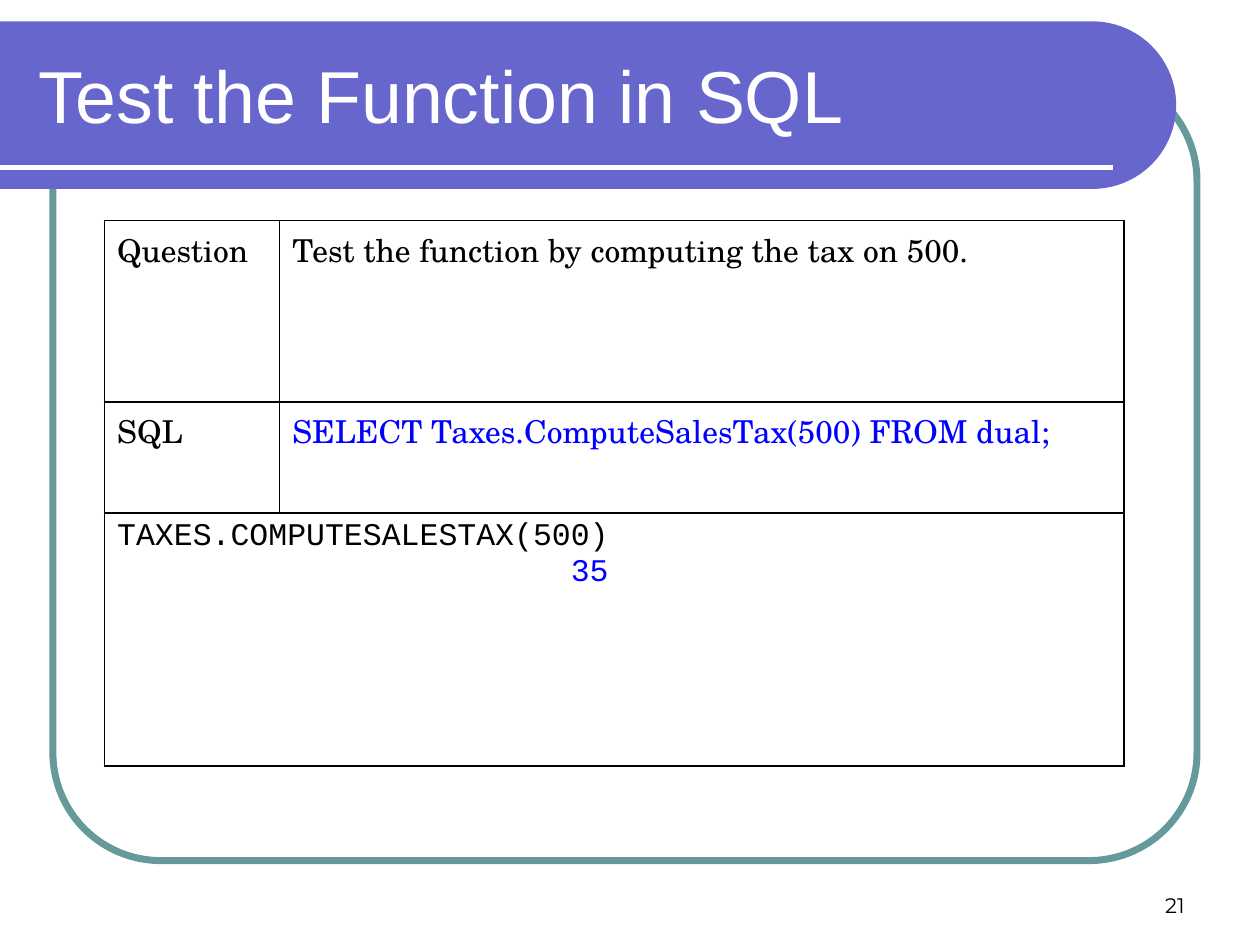
from math import cos, sin, pi
from lxml.etree import SubElement
from pptx import Presentation
from pptx.dml.color import RGBColor as RGB
from pptx.enum.shapes import MSO_CONNECTOR as Conn, MSO_SHAPE as Shape
from pptx.enum.text import MSO_ANCHOR as Anchor, PP_ALIGN as Align
from pptx.oxml import parse_xml
from pptx.oxml.ns import nsdecls, qn
from pptx.util import Inches, Pt

THEME = {
    "banner": "6666CC", "frame": "669999", "white": "FFFFFF",
    "black": "000000", "blue": "0000FF",
    "title": {"name": "Arial", "size": Pt(42)},
    "number": {"name": "Montserrat", "size": Pt(12)},
    "body": {"name": "TeX Gyre Schola", "size": Pt(18)},
    "code": {"name": "Courier New", "size": Pt(18)},
}

TITLE = "Test the Function in SQL"
NUMBER = "21"
HANG = (0.38, -0.38)
RESULT = (3.6, 0)  # puts the value under the right end of its heading

# Each cell holds lines of text, font, colour and (margin, indent).
ROWS = [
    [[("Question", "body", "black", HANG)],
     [("Test the function by computing the tax on 500.", "body", "black", HANG)]],
    [[("SQL", "body", "black", HANG)],
     [("SELECT Taxes.ComputeSalesTax(500) FROM dual;", "body", "blue", HANG)]],
    [[("TAXES.COMPUTESALESTAX(500)", "code", "black", HANG),
      ("35", "code", "blue", RESULT)]],
]
WIDTHS = [1.39, 6.7]
HEIGHTS = [1.44, 0.88, 2.01]


def color(name):
    return RGB.from_string(THEME[name])


def write(para, text, font, hue):
    run = para.add_run()
    run.text = text
    for key, value in THEME[font].items():
        setattr(run.font, key, value)
    run.font.color.rgb = color(hue)


def add_text(slide, box, text, font, hue, anchor, align):
    frame = slide.shapes.add_textbox(*map(Inches, box)).text_frame
    frame.word_wrap = True
    frame.vertical_anchor = anchor
    para = frame.paragraphs[0]
    para.alignment = align
    write(para, text, font, hue)


def add_frame(slide):
    box = map(Inches, (0.42, 0.58, 9.08, 6.25))
    frame = slide.shapes.add_shape(Shape.ROUNDED_RECTANGLE, *box)
    frame.adjustments[0] = 0.137
    frame.shadow.inherit = False
    frame.fill.background()
    frame.line.color.rgb = color("frame")
    frame.line.width = Pt(4)


def add_banner(slide):
    """Draw a band with a half-round right end, and the rule across it."""
    left, top, low, steps = 8.67, 0.17, 1.5, 60
    rad = (low - top) / 2
    turns = [pi * (i / steps - 0.5) for i in range(steps + 1)]
    arc = [(left + rad * cos(a), top + rad + rad * sin(a)) for a in turns]
    build = slide.shapes.build_freeform(0, Inches(top), scale=1.0)
    build.add_line_segments(
        [(Inches(x), Inches(y)) for x, y in arc + [(0, low)]], close=True)
    band = build.convert_to_shape()
    band.shadow.inherit = False
    band.fill.solid()
    band.fill.fore_color.rgb = color("banner")
    band.line.fill.background()

    ends = map(Inches, (0, 1.33, 8.83, 1.33))
    rule = slide.shapes.add_connector(Conn.STRAIGHT, *ends)
    rule.line.color.rgb = color("white")
    rule.line.width = Pt(3)
    SubElement(rule._element.spPr, qn("a:effectLst"))


def add_borders(cell):
    props = cell._tc.get_or_add_tcPr()
    for i, side in enumerate(("lnL", "lnR", "lnT", "lnB")):
        props.insert(i, parse_xml(
            f'<a:{side} {nsdecls("a")} w="{Pt(1)}"><a:solidFill>'
            f'<a:srgbClr val="{THEME["black"]}"/></a:solidFill></a:{side}>'))


def fill_cell(cell, lines):
    frame = cell.text_frame
    for i, (text, font, hue, shift) in enumerate(lines):
        para = frame.add_paragraph() if i else frame.paragraphs[0]
        props = para._p.get_or_add_pPr()
        for key, value in zip(("marL", "indent"), shift):
            props.set(key, str(Inches(value)))
        write(para, text, font, hue)


def add_grid(slide):
    box = map(Inches, (0.83, 1.75, sum(WIDTHS), sum(HEIGHTS)))
    table = slide.shapes.add_table(len(ROWS), len(WIDTHS), *box).table
    table.first_row = table.horz_banding = False
    for col, width in zip(table.columns, WIDTHS):
        col.width = Inches(width)
    for row, height in zip(table.rows, HEIGHTS):
        row.height = Inches(height)
    for r, cells in enumerate(ROWS):
        if len(cells) == 1:
            table.cell(r, 0).merge(table.cell(r, len(WIDTHS) - 1))
        for c, lines in enumerate(cells):
            fill_cell(table.cell(r, c), lines)
    for cell in table.iter_cells():
        cell.fill.background()
        add_borders(cell)


def main():
    deck = Presentation()
    deck.slide_width, deck.slide_height = Inches(10), Inches(7.5)
    slide = deck.slides.add_slide(deck.slide_layouts[6])
    add_frame(slide)
    add_banner(slide)
    add_text(slide, (7.17, 6.83, 2.33, 0.5), NUMBER, "number", "black",
             Anchor.BOTTOM, Align.RIGHT)
    add_text(slide, (0.21, 0.25, 8.77, 1), TITLE, "title", "white",
             Anchor.MIDDLE, Align.LEFT)
    add_grid(slide)
    deck.save("out.pptx")


if __name__ == "__main__":
    main()
